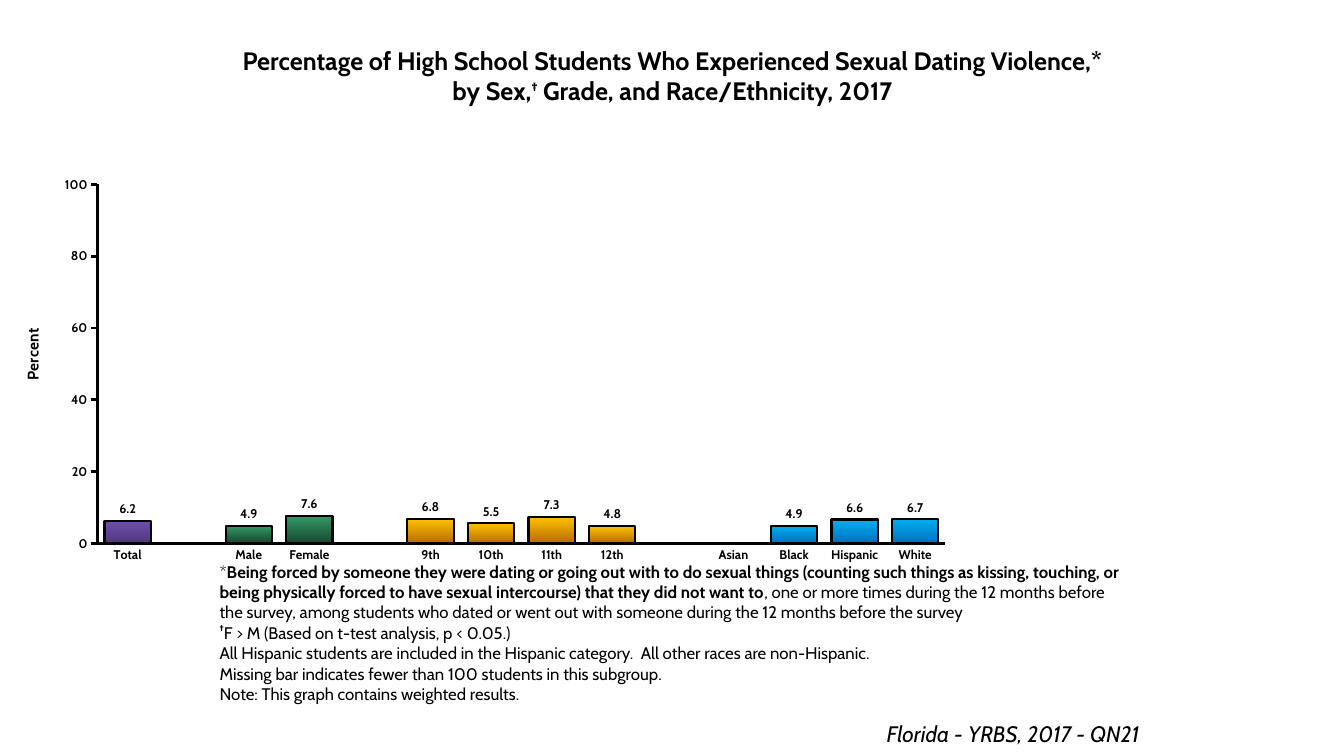
"""Build the sexual dating violence chart slide."""
from dataclasses import dataclass

import pptx
import pptx.chart.data
import pptx.dml.color
import pptx.enum.chart
import pptx.enum.text
import pptx.oxml
import pptx.oxml.ns
import pptx.util

Inches = pptx.util.Inches
Pt = pptx.util.Pt
Align = pptx.enum.text.PP_ALIGN


@dataclass(frozen=True)
class Theme:
    """Colours, font and type sizes of the slide."""
    font: str = "Cabin"
    ink: str = "000000"
    title: int = 18
    title_mark: int = 17
    source: int = 16
    note: int = 12
    axis_title: int = 11
    label: int = 9
    line: int = 2
    bar_line: float = 1.5
    total: tuple = ("6E4EAE", "4F387C")
    sex: tuple = ("339966", "18472F")
    grade: tuple = ("FFC000", "B66D00")
    race: tuple = ("00B0F0", "0070C0")


def rgb(value):
    """Return a colour object for a hex string."""
    return pptx.dml.color.RGBColor.from_string(value)


def place(parent, index, inner=False, **fractions):
    """Give a chart part a manual layout in fractions of the chart."""
    for layout in parent.findall(pptx.oxml.ns.qn("c:layout")):
        parent.remove(layout)
    modes = '<c:layoutTarget val="inner"/>' if inner else ""
    modes += '<c:xMode val="edge"/><c:yMode val="edge"/>'
    sizes = "".join(f'<c:{key} val="{value}"/>' for key, value in fractions.items())
    parent.insert(index, pptx.oxml.parse_xml(
        f'<c:layout {pptx.oxml.ns.nsdecls("c")}><c:manualLayout>'
        f"{modes}{sizes}</c:manualLayout></c:layout>"))


class SlideBuilder:
    """Draws styled elements on one slide."""

    def __init__(self, slide, theme):
        self.slide = slide
        self.theme = theme

    def style(self, font, size, bold=None, italic=None):
        """Apply the theme font at a given size."""
        font.name = self.theme.font
        font.size = Pt(size)
        font.bold = bold
        font.italic = italic
        font.color.rgb = rgb(self.theme.ink)

    def text(self, box, paragraphs, size, align=Align.LEFT, bold=None, italic=None,
             anchor=pptx.enum.text.MSO_ANCHOR.TOP):
        """Add a text box; each run is (text, bold, baseline percent, size)."""
        shape = self.slide.shapes.add_textbox(*map(Inches, box))
        frame = shape.text_frame
        frame.word_wrap = True
        frame.auto_size = pptx.enum.text.MSO_AUTO_SIZE.SHAPE_TO_FIT_TEXT
        frame.vertical_anchor = anchor
        for number, runs in enumerate(paragraphs):
            paragraph = frame.add_paragraph() if number else frame.paragraphs[0]
            paragraph.alignment = align
            self.style(paragraph.font, size, bold, italic)
            for words, run_bold, baseline, run_size in runs:
                run = paragraph.add_run()
                run.text = words
                run.font.bold = run_bold
                if run_size:
                    run.font.size = Pt(run_size)
                if baseline:
                    run._r.get_or_add_rPr().set("baseline", str(baseline * 1000))

    def axis(self, axis, tick):
        """Style an axis line, its ticks and its labels."""
        axis.has_major_gridlines = False
        axis.major_tick_mark = tick
        axis.format.line.color.rgb = rgb(self.theme.ink)
        axis.format.line.width = Pt(self.theme.line)
        self.style(axis.tick_labels.font, self.theme.label, bold=True)

    def column_chart(self, box, groups, axis_title):
        """Add a column chart with a blank category between groups."""
        theme = self.theme
        bars = []
        for colors, members in groups:
            if bars:
                bars.append(("", None, None))
            bars += [(name, value, colors) for name, value in members]
        data = pptx.chart.data.CategoryChartData(number_format="General")
        data.categories = [name for name, _, _ in bars]
        data.add_series("Series 1", [value for _, value, _ in bars])
        chart = self.slide.shapes.add_chart(
            pptx.enum.chart.XL_CHART_TYPE.COLUMN_CLUSTERED,
            *map(Inches, box), data).chart
        self.style(chart.font, theme.title)
        chart.has_legend = False
        chart.has_title = False

        self.axis(chart.category_axis, pptx.enum.chart.XL_TICK_MARK.NONE)
        value_axis = chart.value_axis
        self.axis(value_axis, pptx.enum.chart.XL_TICK_MARK.OUTSIDE)
        value_axis.minimum_scale, value_axis.maximum_scale = 0, 100
        value_axis.major_unit = 20
        frame = value_axis.axis_title.text_frame
        frame.text = axis_title
        self.style(frame.paragraphs[0].runs[0].font, theme.axis_title, bold=True)
        frame._txBody.bodyPr.set("rot", "-5400000")
        frame._txBody.bodyPr.set("vert", "horz")
        place(value_axis.axis_title._element, 1, x=0.02, y=0.39)
        plot_area = chart._chartSpace.chart.plotArea
        place(plot_area, 0, inner=True, x=0.101, y=0.04, w=0.88, h=0.89)

        plot = chart.plots[0]
        plot.gap_width, plot.overlap = 31, 100
        plot.vary_by_categories = False
        plot.has_data_labels = True
        labels = plot.data_labels
        labels.show_value = True
        labels.number_format = "#,##0.0"
        labels.number_format_is_linked = False
        labels.position = pptx.enum.chart.XL_LABEL_POSITION.OUTSIDE_END
        self.style(labels.font, theme.label, bold=True)
        for index, (_, _, colors) in enumerate(bars):
            if colors:
                self.bar(plot.series[0].points[index].format, colors)

    def bar(self, bar_format, colors):
        """Fill a bar from top to bottom and outline it."""
        bar_format.fill.gradient()
        bar_format.fill.gradient_angle = 270
        for stop, color in zip(bar_format.fill.gradient_stops, colors):
            stop.color.rgb = rgb(color)
        bar_format.line.color.rgb = rgb(self.theme.ink)
        bar_format.line.width = Pt(self.theme.bar_line)


def main():
    """Create the presentation and save it."""
    presentation = pptx.Presentation()
    presentation.slide_width = Inches(13.33)
    presentation.slide_height = Inches(7.5)
    theme = Theme()
    slide = presentation.slides.add_slide(presentation.slide_layouts[6])
    builder = SlideBuilder(slide, theme)

    def plain(words):
        return (words, None, 0, None)

    builder.text((2.17, 0.4, 9, 0.71), [[
        plain("Percentage of High School Students Who Experienced Sexual Dating "
              "Violence,* by Sex,"),
        ("†", None, 40, theme.title_mark),
        plain(" Grade, and Race/Ethnicity, 2017"),
    ]], theme.title, Align.CENTER, bold=True)
    builder.text((2.08, 5.52, 9.17, 1.51), [
        [plain("*"),
         ("Being forced by someone they were dating or going out with to do sexual "
          "things (counting such things as kissing, touching, or being physically "
          "forced to have sexual intercourse) that they did not want to", True, 0, None),
         plain(", one or more times during the 12 months before the survey, among "
               "students who dated or went out with someone during the 12 months "
               "before the survey")],
        [("†", True, 50, None), plain("F > M (Based on t-test analysis, p < 0.05.)")],
        [plain("All Hispanic students are included in the Hispanic category.  "
               "All other races are non-Hispanic.")],
        [plain("Missing bar indicates fewer than 100 students in this subgroup.")],
        [plain("Note: This graph contains weighted results.")],
    ], theme.note, anchor=pptx.enum.text.MSO_ANCHOR.BOTTOM)
    builder.text((2, 7.1, 9.4, 0.37), [[plain("Florida - YRBS, 2017 - QN21")]],
                 theme.source, Align.RIGHT, italic=True)
    builder.column_chart((0, 1.67, 9.56, 4), [
        (theme.total, [("Total", 6.2)]),
        (theme.sex, [("Male", 4.9), ("Female", 7.6)]),
        (theme.grade, [("9th", 6.8), ("10th", 5.5), ("11th", 7.3), ("12th", 4.8)]),
        (theme.race, [("Asian", None), ("Black", 4.9), ("Hispanic", 6.6),
                      ("White", 6.7)]),
    ], "Percent")
    presentation.save("out.pptx")


if __name__ == "__main__":
    main()
